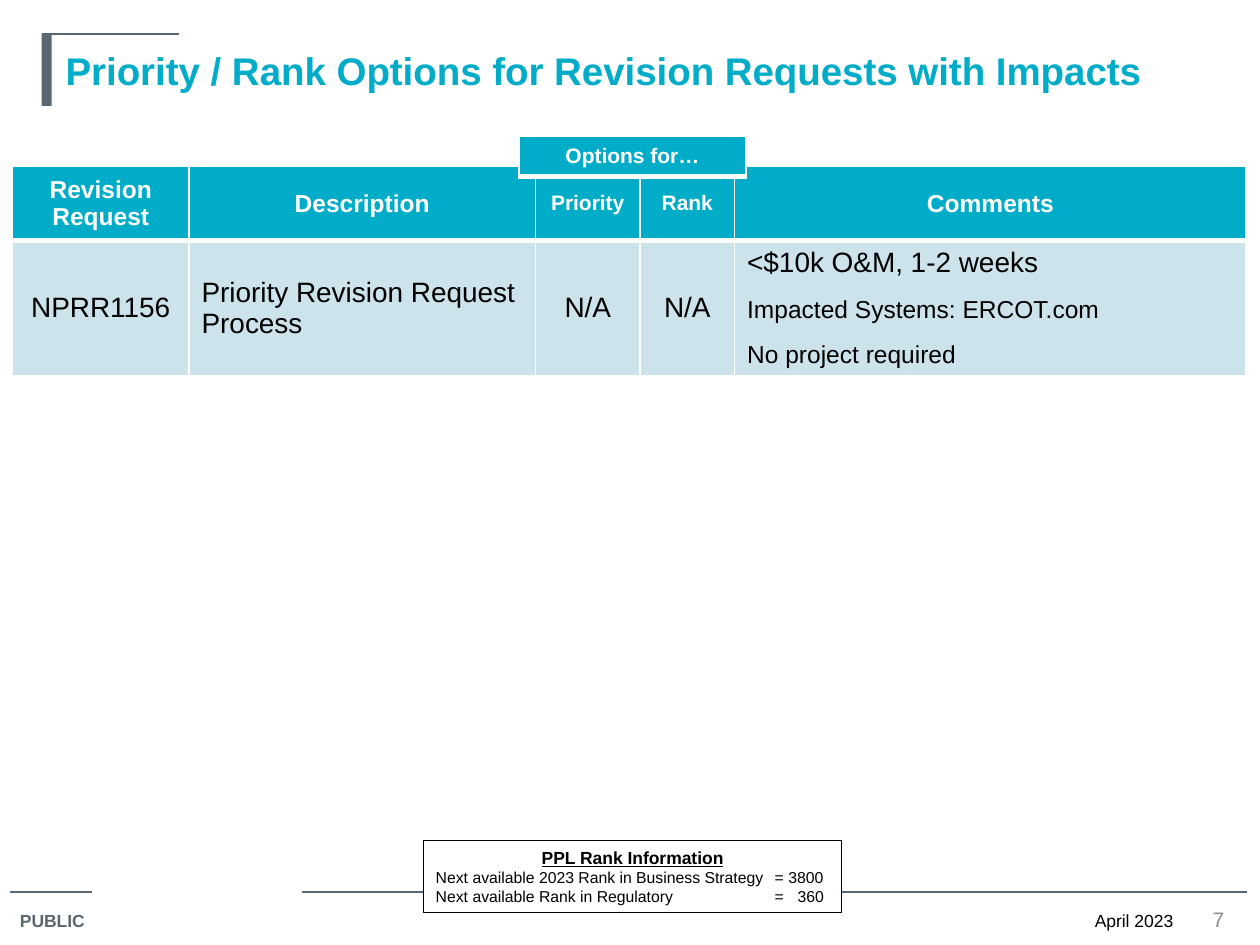
"""Build the slide of priority and rank options for revision requests."""
from lxml.etree import SubElement
from pptx import Presentation
from pptx.dml.color import RGBColor
from pptx.enum.shapes import MSO_CONNECTOR, MSO_SHAPE
from pptx.enum.text import MSO_ANCHOR, MSO_AUTO_SIZE, PP_ALIGN
from pptx.oxml.ns import qn
from pptx.util import Inches, Pt

COLORS = {"teal": "00ACC8", "slate": "5B6770", "pale": "CCE3EB",
          "white": "FFFFFF", "black": "000000", "gray": "8C8C8C"}
COLORS = {name: RGBColor.from_string(value) for name, value in COLORS.items()}
LEFT, CENTER, RIGHT = PP_ALIGN.LEFT, PP_ALIGN.CENTER, PP_ALIGN.RIGHT

deck = Presentation()
deck.slide_width, deck.slide_height = Inches(10), Inches(7.5)
column, row = deck.slide_width / 100, deck.slide_height / 75
page = deck.slides.add_slide(deck.slide_layouts[5])


def write(frame, lines, sizes, color, bold=False, align=LEFT, anchor=MSO_ANCHOR.TOP):
    frame.text = "\n".join(lines)
    frame.word_wrap = True
    frame.vertical_anchor = anchor
    for para, size in zip(frame.paragraphs, sizes):
        para.alignment = align
        for span in para.runs:
            span.font.name = "Arial"
            span.font.size = Pt(size)
            span.font.bold = bold
            span.font.color.rgb = COLORS[color]


def add_grid(left, top, widths, heights):
    shape = page.shapes.add_table(len(heights), len(widths), int(left * column), int(top * row),
                                  int(sum(widths) * column), int(sum(heights) * row))
    table = shape.table
    for part, width in zip(table.columns, widths):
        part.width = int(width * column)
    for part, height in zip(table.rows, heights):
        part.height = int(height * row)
    for number, part in enumerate(table.rows):
        for cell in part.cells:
            properties = cell._tc.get_or_add_tcPr()
            for side in ("lnL", "lnR", "lnT", "lnB"):
                thick = (side == "lnB" and number == 0) or (side == "lnT" and number == 1)
                border = SubElement(properties, qn(f"a:{side}"), w=str(Pt(3 if thick else 1)))
                fill = SubElement(border, qn("a:solidFill"))
                SubElement(fill, qn("a:srgbClr"), val=str(COLORS["white"]))
            cell.fill.solid()
            cell.fill.fore_color.rgb = COLORS["pale" if number else "teal"]
            cell.vertical_anchor = MSO_ANCHOR.MIDDLE
            cell.margin_top = cell.margin_bottom = int(0.3 * row)
    return table


for start, end, level in [(0.8, 7.3, 70.8), (24, 99, 70.8), (3.3, 14.2, 2.7)]:
    rule = page.shapes.add_connector(MSO_CONNECTOR.STRAIGHT, int(start * column), int(level * row),
                                     int(end * column), int(level * row))
    rule.line.color.rgb = COLORS["slate"]
    rule.line.width = Pt(0.75)
    SubElement(rule._element.spPr, qn("a:effectLst"))

accent = page.shapes.add_shape(MSO_SHAPE.RECTANGLE, int(3.3 * column), int(2.7 * row),
                               int(0.8 * column), int(5.7 * row))
accent.shadow.inherit = False
accent.fill.solid()
accent.fill.fore_color.rgb = COLORS["slate"]
accent.line.fill.background()

title = page.shapes.title
title.left, title.top = int(4.2 * column), int(3.2 * row)
title.width, title.height = int(90 * column), int(5.7 * row)
write(title.text_frame, ["Priority / Rank Options for Revision Requests with Impacts"],
      [22], "teal", True)
title.text_frame.auto_size = MSO_AUTO_SIZE.NONE

footers = [
    ("PUBLIC", 0.6, 71.7, 7.7, 2.8, 10, "slate", True, LEFT, MSO_ANCHOR.TOP),
    ("April 2023", 80.8, 71.7, 13.3, 2.4, 10, "black", False, RIGHT, MSO_ANCHOR.TOP),
    ("7", 94.2, 71.8, 5, 2.3, 12, "gray", False, CENTER, MSO_ANCHOR.MIDDLE),
]
for words, left, top, width, height, size, color, bold, align, anchor in footers:
    box = page.shapes.add_textbox(int(left * column), int(top * row),
                                  int(width * column), int(height * row))
    write(box.text_frame, [words], [size], color, bold, align, anchor)

requests = add_grid(1, 13.2, [14, 27.5, 8.3, 7.5, 40.6], [5.9, 10.7])
headings = [("Revision Request", 14), ("Description", 14), ("Priority", 12),
            ("Rank", 12), ("Comments", 14)]
for cell, (heading, size) in zip(requests.rows[0].cells, headings):
    write(cell.text_frame, [heading], [size], "white", True, CENTER, MSO_ANCHOR.MIDDLE)
details = [
    (["NPRR1156"], CENTER),
    (["Priority Revision Request Process"], LEFT),
    (["N/A"], CENTER),
    (["N/A"], CENTER),
    (["<$10k O&M, 1-2 weeks", "Impacted Systems: ERCOT.com", "No project required"], LEFT),
]
for cell, (lines, align) in zip(requests.rows[1].cells, details):
    write(cell.text_frame, lines, [16, 14, 14], "black", False, align, MSO_ANCHOR.MIDDLE)
    for para in cell.text_frame.paragraphs[1:]:
        para.space_before = Pt(10)

options = add_grid(41.2, 10.8, [18], [3.2])
write(options.cell(0, 0).text_frame, ["Options for…"], [12], "white", True, CENTER,
      MSO_ANCHOR.MIDDLE)

ranks = page.shapes.add_shape(MSO_SHAPE.RECTANGLE, int(33.6 * column), int(66.7 * row),
                              int(33.2 * column), int(5.7 * row))
ranks.shadow.inherit = False
ranks.fill.solid()
ranks.fill.fore_color.rgb = COLORS["white"]
ranks.line.color.rgb = COLORS["black"]
ranks.line.width = Pt(0.75)
write(ranks.text_frame, ["PPL Rank Information",
                         "Next available 2023 Rank in Business Strategy\t= 3800",
                         "Next available Rank in Regulatory\t=\t360"],
      [10, 9, 9], "black", anchor=MSO_ANCHOR.MIDDLE)
heading, *entries = ranks.text_frame.paragraphs
heading.alignment = CENTER
heading.runs[0].font.bold = heading.runs[0].font.underline = True
for para in entries:
    stops = SubElement(para._p.get_or_add_pPr(), qn("a:tabLst"))
    for position, side in [(26.9, "l"), (30.8, "r")]:
        SubElement(stops, qn("a:tab"), pos=str(int(position * column)), algn=side)

deck.save("out.pptx")
